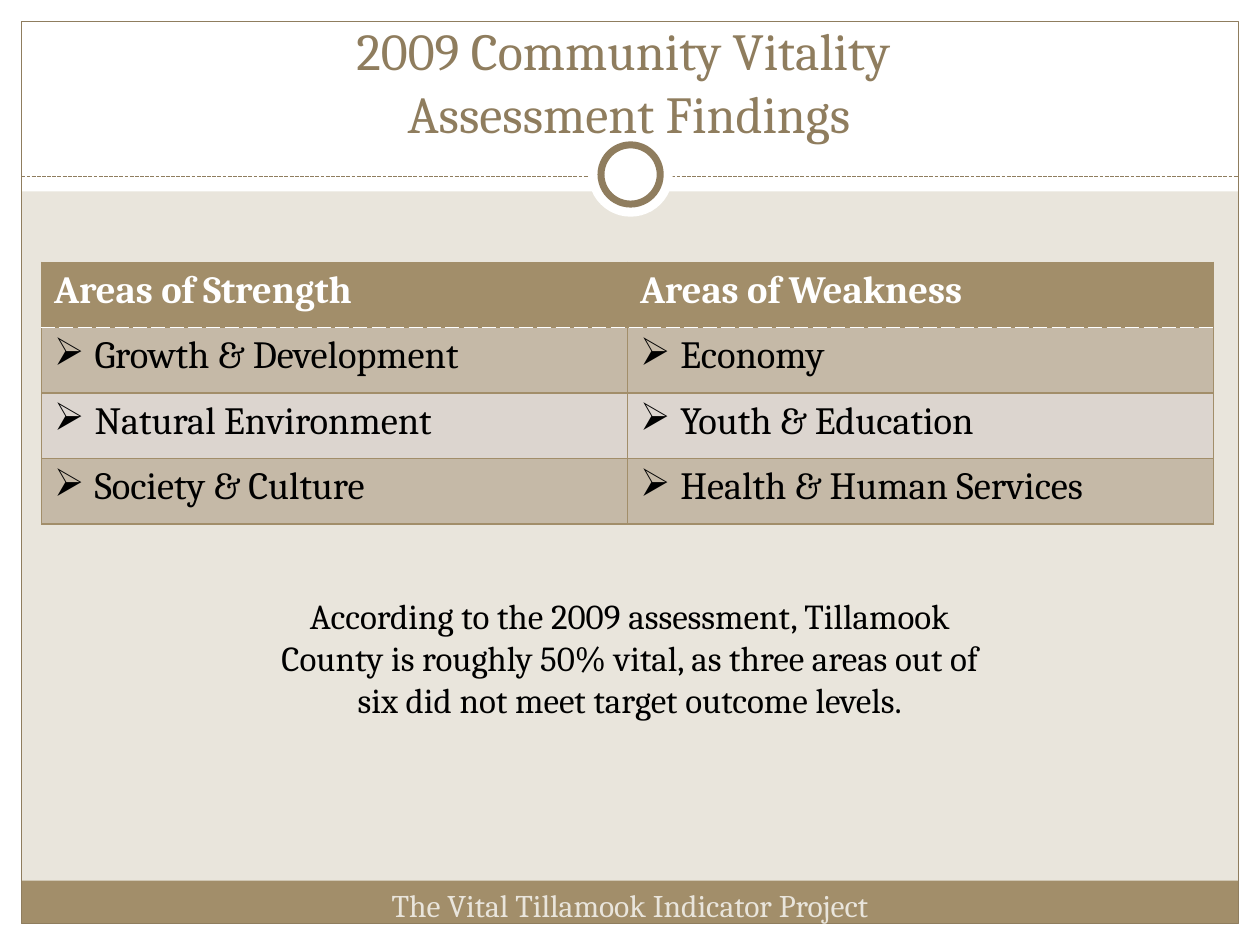
from lxml import etree
from pptx import Presentation
from pptx.dml.color import RGBColor
from pptx.enum.dml import MSO_LINE
from pptx.enum.shapes import MSO_CONNECTOR, MSO_SHAPE
from pptx.enum.text import MSO_ANCHOR, PP_ALIGN
from pptx.oxml.ns import qn
from pptx.util import Inches, Pt

RECT, OVAL = MSO_SHAPE.RECTANGLE, MSO_SHAPE.OVAL
LINE, DASH = MSO_CONNECTOR.STRAIGHT, MSO_LINE.SQUARE_DOT
LEFT, MID = PP_ALIGN.LEFT, PP_ALIGN.CENTER
TOP, BASE = MSO_ANCHOR.TOP, MSO_ANCHOR.BOTTOM
WHITE = RGBColor(0xFF, 0xFF, 0xFF)
BLACK = RGBColor(0, 0, 0)
CREAM = RGBColor(0xE9, 0xE5, 0xDC)
TAN = RGBColor(0xA2, 0x8E, 0x6A)
BROWN = RGBColor(0x8F, 0x7D, 0x5E)
DARK = RGBColor(0xC5, 0xB9, 0xA7)
LIGHT = RGBColor(0xDC, 0xD5, 0xCF)
FONT = "Cambria"
ROWS = [
    ("Areas of Strength", "Areas of Weakness"),
    ("Growth & Development", "Economy"),
    ("Natural Environment", "Youth & Education"),
    ("Society & Culture", "Health & Human Services"),
]


def write(frame, text, size, color, bold=False, align=LEFT, bullet=None):
    frame.word_wrap = True
    para = frame.paragraphs[0]
    para.text = text
    para.alignment = align
    font = para.font
    font.name, font.size, font.bold = FONT, Pt(size), bold
    font.color.rgb = color
    for run in para.runs:
        run.font.name, run.font.size, run.font.bold = FONT, Pt(size), bold
        run.font.color.rgb = color
    if bullet:
        props = para._p.get_or_add_pPr()
        props.set("marL", str(Inches(0.32)))
        props.set("indent", str(-Inches(0.32)))
        mark = etree.Element(qn("a:buChar"), char=bullet)
        props.insert_element_before(mark, "a:tabLst", "a:defRPr", "a:extLst")


def label(slide, box, text, size, color, anchor=TOP):
    frame = slide.shapes.add_textbox(*map(Inches, box)).text_frame
    frame.vertical_anchor = anchor
    write(frame, text, size, color, align=MID)


def shape(slide, kind, box, fill=None, line=None, width=0.75):
    item = slide.shapes.add_shape(kind, *map(Inches, box))
    item.shadow.inherit = False
    if fill is None:
        item.fill.background()
    else:
        item.fill.solid()
        item.fill.fore_color.rgb = fill
    if line is None:
        item.line.fill.background()
    else:
        item.line.color.rgb = line
        item.line.width = Pt(width)


def ring(slide, x, y, size):
    shape(slide, OVAL, (x, y, size, size), WHITE)
    gap = 0.1
    inner = size - 2 * gap
    shape(slide, OVAL, (x + gap, y + gap, inner, inner), WHITE, BROWN, 4)


def frame(slide, width, height):
    edge = 0.17
    for box in (
        (0, height - edge, width, edge),
        (0, 0, width, 1.52),
        (0, 0, edge, height),
        (width - edge, 0, edge, height),
    ):
        shape(slide, RECT, box, WHITE)
    inner = width - 2 * edge
    shape(slide, RECT, (edge, 6.99, inner, 0.34), TAN)
    shape(slide, RECT, (edge, edge, inner, height - 2 * edge), line=BROWN)
    rule = slide.shapes.add_connector(
        LINE, Inches(edge), Inches(1.4), Inches(width - edge), Inches(1.4)
    )
    rule.line.color.rgb = BROWN
    rule.line.width = Pt(0.75)
    rule.line.dash_style = DASH
    etree.SubElement(rule._element.spPr, qn("a:effectLst"))
    ring(slide, 4.67, 1.05, 0.67)


def border(cell, side, color=TAN, width=0.75, dash="solid"):
    props = cell._tc.get_or_add_tcPr()
    line = etree.SubElement(props, qn("a:ln" + side), w=str(Pt(width)))
    fill = etree.SubElement(line, qn("a:solidFill"))
    etree.SubElement(fill, qn("a:srgbClr"), val=str(color))
    etree.SubElement(line, qn("a:prstDash"), val=dash)


def table(slide, box, rows):
    count = len(rows)
    grid = slide.shapes.add_table(count, len(rows[0]), *map(Inches, box)).table
    for r, row in enumerate(rows):
        grid.rows[r].height = Inches(box[3] / count)
        for c, text in enumerate(row):
            cell = grid.cell(r, c)
            head = r == 0
            for side in "LRTB":
                if (r, side) in ((0, "B"), (1, "T")):
                    border(cell, side, WHITE, 0.9, "sysDash")
                else:
                    border(cell, side)
            cell.fill.solid()
            cell.fill.fore_color.rgb = TAN if head else DARK if r % 2 else LIGHT
            write(cell.text_frame, text, 22, WHITE if head else BLACK,
                  bold=head, bullet=None if head else "➢")


def main():
    deck = Presentation()
    deck.slide_width, deck.slide_height = Inches(10), Inches(7.5)
    slide = deck.slides.add_slide(deck.slide_layouts[6])
    slide.background.fill.solid()
    slide.background.fill.fore_color.rgb = CREAM
    frame(slide, 10, 7.5)
    label(slide, (0.33, 0.36, 9.33, 0.83),
          "2009 Community Vitality \vAssessment Findings", 29.7, BROWN, BASE)
    table(slide, (0.33, 2.08, 9.3, 2.08), ROWS)
    label(slide, (2.75, 6.98, 4.5, 0.4),
          "The Vital Tillamook Indicator Project", 18, CREAM)
    label(slide, (2, 4.67, 6, 1.11),
          "According to the 2009 assessment, Tillamook County is roughly 50% "
          "vital, as three areas out of six did not meet target outcome levels.",
          20, BLACK)
    deck.save("out.pptx")


if __name__ == "__main__":
    main()
